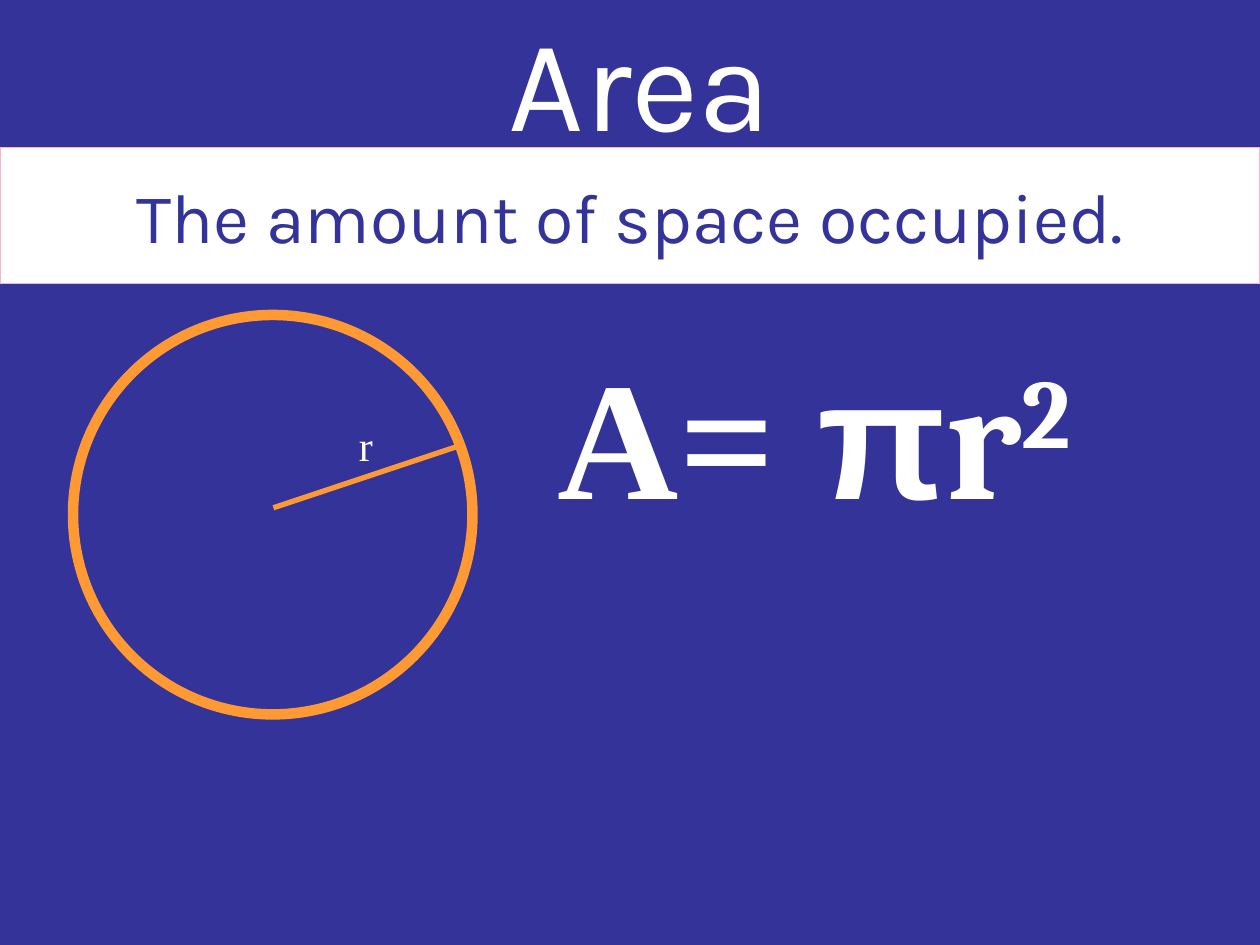
from lxml.etree import SubElement
from pptx import Presentation
from pptx.dml.color import RGBColor
from pptx.enum.shapes import MSO_CONNECTOR, MSO_SHAPE
from pptx.enum.text import MSO_ANCHOR, MSO_AUTO_SIZE, PP_ALIGN
from pptx.oxml.ns import qn
from pptx.util import Inches, Pt

NAVY, WHITE, ORANGE, PINK = "333399", "FFFFFF", "FF9933", "FFAFD1"


def paint(target, color):
    """Give a fill or line a solid colour."""
    target.solid()
    target.fore_color.rgb = RGBColor.from_string(color)


def write(paragraph, text, font="Times New Roman", size=24, color=WHITE, bold=False, raised=False):
    """Append formatted text to a paragraph."""
    run = paragraph.add_run()
    run.text = text
    run.font.name = font
    run.font.size = Pt(size)
    run.font.bold = bold
    paint(run.font.fill, color)
    if raised:
        run.font._element.set("baseline", "30000")


class Board:
    """Hold the slide and the style of its elements."""

    def __init__(self, slide):
        """Paint the background and open a group for the diagram."""
        self.slide = slide
        paint(slide.background.fill, NAVY)
        self.diagram = slide.shapes.add_group_shape()

    def banner(self, placeholder, box, text, size, fill, color, border=None):
        """Place a filled placeholder with centred text."""
        placeholder.left, placeholder.top, placeholder.width, placeholder.height = map(Inches, box)
        paint(placeholder.fill, fill)
        if border:
            paint(placeholder.line.fill, border)
            placeholder.line.width = Pt(1)
        frame = placeholder.text_frame
        frame.auto_size = MSO_AUTO_SIZE.NONE
        frame.vertical_anchor = MSO_ANCHOR.MIDDLE
        frame.paragraphs[0].alignment = PP_ALIGN.CENTER
        write(frame.paragraphs[0], text, font="Karla", size=size, color=color)

    def label(self, shapes, box):
        """Add a text box and return its paragraph."""
        frame = shapes.add_textbox(*map(Inches, box)).text_frame
        frame.word_wrap = True
        return frame.paragraphs[0]

    def circle(self, box):
        """Outline a circle in the diagram."""
        outline = self.diagram.shapes.add_shape(MSO_SHAPE.OVAL, *map(Inches, box))
        outline.shadow.inherit = False
        outline.fill.background()
        paint(outline.line.fill, ORANGE)
        outline.line.width = Pt(6)

    def line(self, start, end, dot=False):
        """Draw a line in the diagram, with a dot at its end on request."""
        stroke = self.diagram.shapes.add_connector(
            MSO_CONNECTOR.STRAIGHT, *map(Inches, start + end))
        paint(stroke.line.fill, ORANGE)
        stroke.line.width = Pt(3)
        if dot:
            SubElement(stroke.line._get_or_add_ln(), qn("a:tailEnd"), type="oval")
        SubElement(stroke._element.spPr, qn("a:effectLst"))


def main():
    """Build the slide on the area of a circle."""
    deck = Presentation()
    deck.slide_width, deck.slide_height = Inches(10), Inches(7.5)
    slide = deck.slides.add_slide(deck.slide_layouts[0])
    board = Board(slide)

    board.banner(slide.shapes.title, (0.83, 0, 8.5, 1.25), "Area", 75, NAVY, WHITE)
    board.banner(slide.placeholders[1], (0, 1.17, 10, 1.08),
                 "The amount of space occupied.", 40, WHITE, NAVY, border=PINK)

    center, rim = (2.17, 4.03), (3.67, 3.53)
    board.circle((0.58, 2.5, 3.17, 3.17))
    write(board.label(board.diagram.shapes, (2.75, 3.28, 0.58, 0.5)), "r")
    board.line(center, center, dot=True)
    board.line(center, rim)

    formula = board.label(slide.shapes, (4.33, 2.58, 5.08, 1.75))
    write(formula, "A= ", size=96, bold=True)
    write(formula, "π", font="Arial", size=96, bold=True)
    write(formula, "r", font="Cambria", size=96, bold=True)
    write(formula, "2", font="Cambria", size=96, bold=True, raised=True)

    deck.save("out.pptx")


if __name__ == "__main__":
    main()
